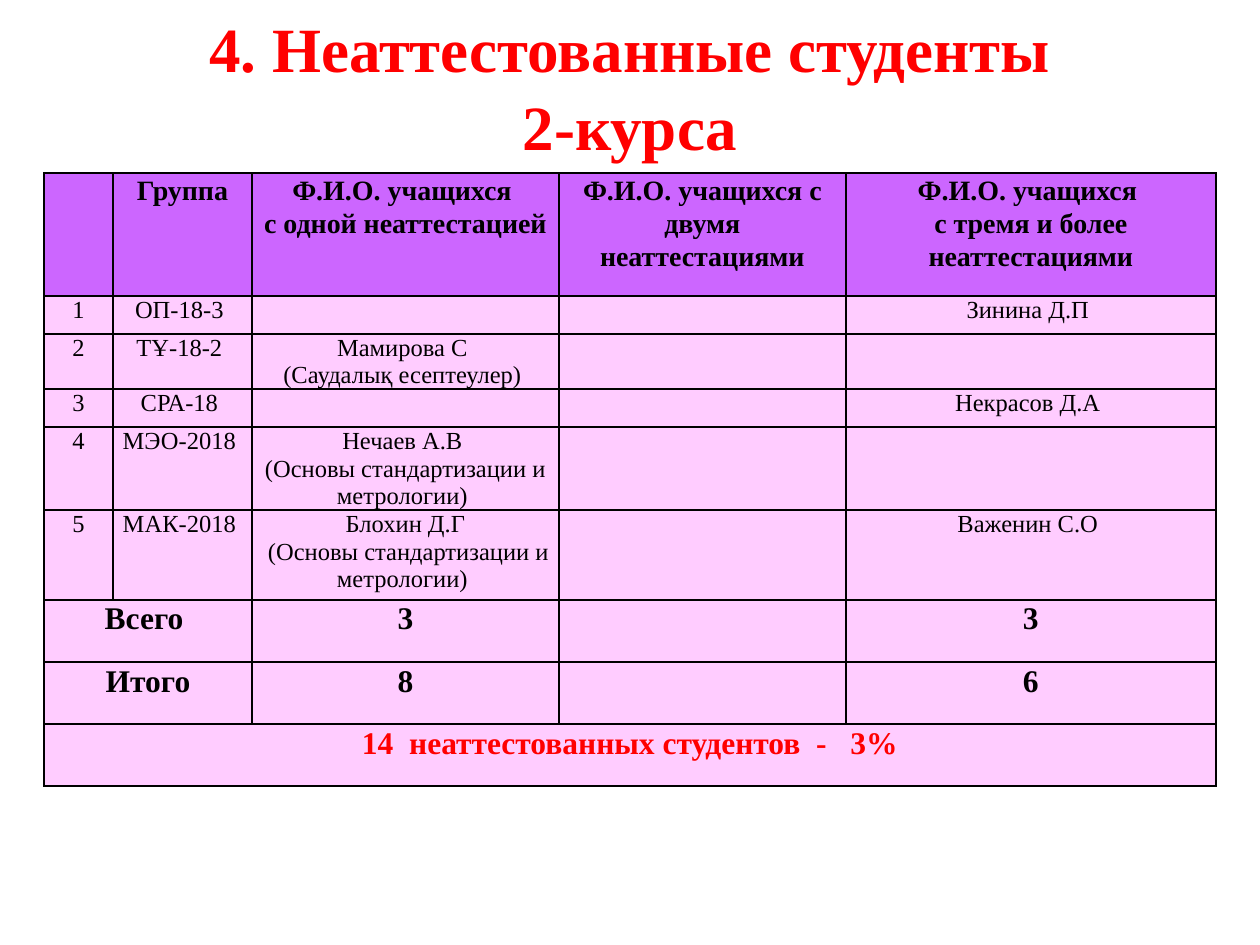
from dataclasses import dataclass

from lxml.etree import SubElement
from pptx import Presentation
from pptx.dml.color import RGBColor
from pptx.enum.text import MSO_ANCHOR as Anchor, MSO_AUTO_SIZE as AutoSize, PP_ALIGN as Align
from pptx.oxml.ns import qn
from pptx.util import Pt

# Content
TITLE = ["4. Неаттестованные студенты", "2-курса"]
HEADER = [
    [], ["Группа"],
    ["Ф.И.О. учащихся ", "с одной неаттестацией"],
    ["Ф.И.О. учащихся с двумя неаттестациями"],
    ["Ф.И.О. учащихся ", "с тремя и более неаттестациями"],
]
STUDENTS = [
    [["1"], ["ОП-18-3 "], [], [], ["Зинина Д.П "]],
    [["2"], ["ТҰ-18-2 "], ["Мамирова С ", "(Саудалық есептеулер) "], [], []],
    [["3"], ["СРА-18 "], [], [], ["Некрасов Д.А "]],
    [["4"], ["МЭО-2018 "], ["Нечаев А.В ", "(Основы стандартизации и метрологии) "], [], []],
    [["5"], ["МАК-2018 "], ["Блохин Д.Г", " (Основы стандартизации и метрологии) "], [],
     ["Важенин С.О "]],
]
SUBTOTAL = [["Всего "], [], ["3"], [], ["3"]]
TOTAL = [["Итого"], [], ["8"], [], ["6"]]
SUMMARY = [["14  неаттестованных студентов  -   3%"], [], [], [], []]

# Layout, in px
PX = 914400 / 126
PAGE = (1260, 945)
TITLE_BOX = (0, -4, 1260, 204)
TABLE_AT = (44, 173)
COLUMNS = [69, 139, 307, 287, 370]
ROW_HEIGHTS = [123, 38, 55, 38, 83, 90, 62, 62, 62]


@dataclass(frozen=True)
class Theme:
    font: str = "Times New Roman"
    ink: str = "000000"
    accent: str = "FF0000"
    header_fill: str = "CC66FF"
    body_fill: str = "FFCCFF"
    title_size: int = 36
    header_size: int = 16
    body_size: int = 14
    total_size: int = 18
    border: int = 1


@dataclass(frozen=True)
class RowStyle:
    size: int
    fill: str = Theme.body_fill
    color: str = Theme.ink
    bold: bool = True
    margins: tuple = (1, 1, 1, 0)
    spacing: float = 1.0


WIDE = {"margins": (9, 0, 9, 0), "spacing": 1.07}
HEADER_STYLE = RowStyle(Theme.header_size, fill=Theme.header_fill, **WIDE)
BODY_STYLE = RowStyle(Theme.body_size, bold=False)
SUBTOTAL_STYLE = RowStyle(Theme.total_size)
TOTAL_STYLE = RowStyle(Theme.total_size, **WIDE)
SUMMARY_STYLE = RowStyle(Theme.total_size, color=Theme.accent, **WIDE)

ROWS = [
    (HEADER, HEADER_STYLE),
    *((student, BODY_STYLE) for student in STUDENTS),
    (SUBTOTAL, SUBTOTAL_STYLE),
    (TOTAL, TOTAL_STYLE),
    (SUMMARY, SUMMARY_STYLE),
]
# Row index and last column of each merge that starts in the first column
MERGES = [(6, 1), (7, 1), (8, 4)]


def emu(px):
    return round(px * PX)


def add_span(para, text, size, color, bold):
    span = para.add_run()
    span.text = text
    span.font.name = Theme.font
    span.font.size = Pt(size)
    span.font.bold = bold
    span.font.color.rgb = RGBColor.from_string(color)


def set_margins(target, margins):
    (target.margin_left, target.margin_top,
     target.margin_right, target.margin_bottom) = map(emu, margins)


def add_borders(cell):
    properties = cell._tc.get_or_add_tcPr()
    for index, side in enumerate(("lnL", "lnR", "lnT", "lnB")):
        line = properties.makeelement(qn(f"a:{side}"), {"w": str(Pt(Theme.border))})
        fill = SubElement(line, qn("a:solidFill"))
        SubElement(fill, qn("a:srgbClr"), val=Theme.ink)
        properties.insert(index, line)


def fill_cell(cell, lines, style):
    set_margins(cell, style.margins)
    cell.vertical_anchor = Anchor.TOP
    cell.fill.solid()
    cell.fill.fore_color.rgb = RGBColor.from_string(style.fill)
    add_borders(cell)
    frame = cell.text_frame
    for index, line in enumerate(lines):
        para = frame.add_paragraph() if index else frame.paragraphs[0]
        para.alignment = Align.CENTER
        para.line_spacing = style.spacing
        add_span(para, line, style.size, style.color, style.bold)
    if not lines:
        # An empty cell must not stretch its row
        SubElement(frame.paragraphs[0]._p, qn("a:endParaRPr"), sz=str(style.size * 100))


def add_title(page):
    box = page.shapes.title
    box.left, box.top, box.width, box.height = map(emu, TITLE_BOX)
    frame = box.text_frame
    frame.word_wrap = True
    frame.auto_size = AutoSize.NONE
    frame.vertical_anchor = Anchor.TOP
    set_margins(frame, (13, 11, 13, 6))
    para = frame.paragraphs[0]
    para.alignment = Align.CENTER
    para.line_spacing = 1.03
    for index, line in enumerate(TITLE):
        if index:
            para.add_line_break()
        add_span(para, line, Theme.title_size, Theme.accent, True)


def add_student_table(page):
    size = (sum(COLUMNS), sum(ROW_HEIGHTS))
    table = page.shapes.add_table(
        len(ROWS), len(COLUMNS), *map(emu, TABLE_AT + size)).table
    table.first_row = table.horz_banding = False
    for column, width in zip(table.columns, COLUMNS):
        column.width = emu(width)
    for row, height, (cells, style) in zip(table.rows, ROW_HEIGHTS, ROWS):
        row.height = emu(height)
        for cell, lines in zip(row.cells, cells):
            fill_cell(cell, lines, style)
    for row, last in MERGES:
        table.cell(row, 0).merge(table.cell(row, last))


def main():
    deck = Presentation()
    deck.slide_width, deck.slide_height = map(emu, PAGE)
    page = deck.slides.add_slide(deck.slide_layouts[5])
    add_student_table(page)
    add_title(page)
    deck.save("out.pptx")


if __name__ == "__main__":
    main()
